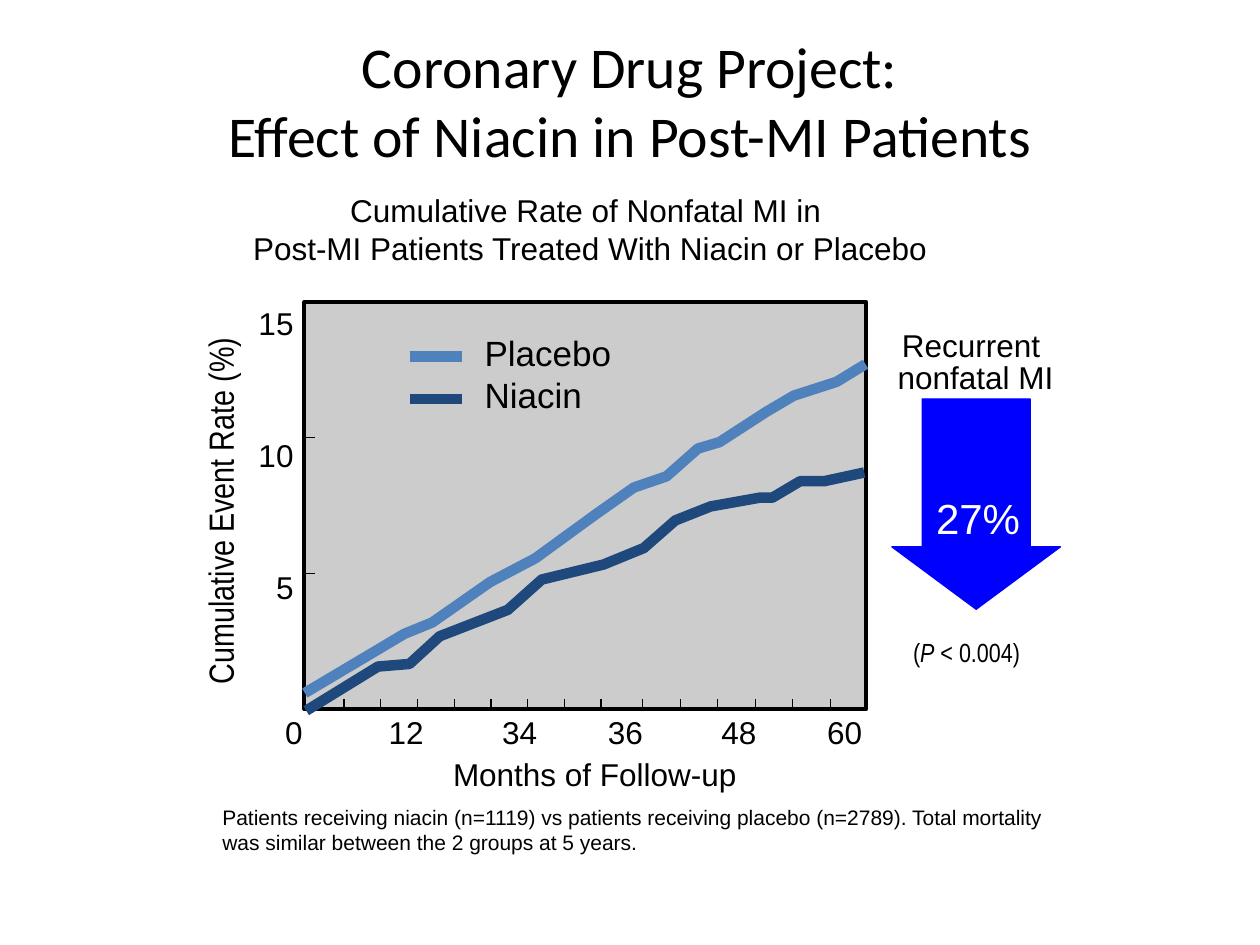
from pptx import Presentation
from pptx.dml.color import RGBColor
from pptx.enum.shapes import MSO_CONNECTOR, MSO_SHAPE
from pptx.enum.text import MSO_ANCHOR, MSO_AUTO_SIZE, PP_ALIGN
from pptx.oxml.ns import qn
from pptx.util import Pt
from lxml.etree import SubElement, Element

BLACK, WHITE, BLUE = "000000", "FFFFFF", "0000FF"
LEFT, CENTER, RIGHT = PP_ALIGN.LEFT, PP_ALIGN.CENTER, PP_ALIGN.RIGHT
PLOT = (174, 172.6, 321.1, 232.6)

SERIES = [
    ("Placebo", "4F81BD", [
        (174.2, 396), (231.1, 362.2), (247, 355.7), (280.1, 332.6), (306, 319),
        (340.6, 293.8), (362.2, 278.6), (380.9, 272.2), (398.9, 256.3),
        (411.1, 252.7), (437.8, 235.4), (453.6, 226.1), (478.1, 218.2),
        (494.6, 208.1)]),
    ("Niacin", "1F497D", [
        (175, 406.1), (216, 380.9), (234, 379.4), (251.3, 363.6),
        (290.2, 348.5), (309.6, 331.2), (344.9, 322.6), (367.9, 313.2),
        (385.9, 297.4), (406.1, 289.4), (434.2, 284.4), (441.4, 284.4),
        (457.2, 275), (470.9, 275), (493.9, 270)]),
]


def rgb(color):
    return RGBColor.from_string(color)


def style_line(line, color, width):
    line.color.rgb = rgb(color)
    line.width = Pt(width)


def format_paragraph(p, size, font="Arial", color=BLACK, align=LEFT):
    p.alignment = align
    p.font.size = Pt(size)
    p.font.name = font
    p.font.color.rgb = rgb(color)


def add_text(s, box, lines, size, font="Arial", color=BLACK, align=LEFT,
             spacing=None, wrap=False, anchor=MSO_ANCHOR.TOP):
    """Add a text box with one paragraph per item of lines."""
    sp = s.shapes.add_textbox(*map(Pt, box))
    tf = sp.text_frame
    tf.word_wrap = wrap
    tf.auto_size = MSO_AUTO_SIZE.SHAPE_TO_FIT_TEXT
    tf.vertical_anchor = anchor
    for i, line in enumerate(lines):
        p = tf.add_paragraph() if i else tf.paragraphs[0]
        p.text = line
        format_paragraph(p, size, font, color, align)
        if spacing:
            p.line_spacing = spacing
    return sp


def add_shape(s, kind, box, fill, line, width):
    sp = s.shapes.add_shape(kind, *map(Pt, box))
    sp.shadow.inherit = False
    sp.fill.solid()
    sp.fill.fore_color.rgb = rgb(fill)
    style_line(sp.line, line, width)
    return sp


def add_line(s, x1, y1, x2, y2, color=BLACK, width=0.75):
    line = s.shapes.add_connector(MSO_CONNECTOR.STRAIGHT,
                                  Pt(x1), Pt(y1), Pt(x2), Pt(y2))
    style_line(line.line, color, width)
    SubElement(line._element.spPr, qn("a:effectLst"))


def add_curve(s, points, color):
    (x, y), *rest = [(Pt(x), Pt(y)) for x, y in points]
    builder = s.shapes.build_freeform(x, y)
    builder.add_line_segments(rest, close=False)
    sp = builder.convert_to_shape()
    sp.shadow.inherit = False
    sp.fill.background()
    style_line(sp.line, color, 6)


def set_opacity(sp, percent):
    color = sp._element.spPr.find(qn("a:solidFill")).find(qn("a:srgbClr"))
    SubElement(color, qn("a:alpha"), val=str(percent * 1000))


def set_center_tabs(p, stops):
    tabs = Element(qn("a:tabLst"))
    for stop in stops:
        SubElement(tabs, qn("a:tab"), pos=str(Pt(stop)), algn="ctr")
    p._p.get_or_add_pPr().insert(0, tabs)


def add_title(s, text):
    sp = s.shapes.title
    sp.left, sp.top, sp.width, sp.height = map(Pt, (36, 12.2, 648, 90))
    tf = sp.text_frame
    tf.auto_size = MSO_AUTO_SIZE.NONE
    tf.vertical_anchor = MSO_ANCHOR.MIDDLE
    p = tf.paragraphs[0]
    p.text = text
    format_paragraph(p, 33, "Calibri", align=CENTER)


def add_axes(s):
    sp = add_text(s, (19.4, 276.5, 212.4, 31), ["Cumulative Event Rate (%)"],
                  20, "Arial Narrow", align=RIGHT)
    sp.rotation = 270
    add_text(s, (139.8, 115.9, 35, 236.2), ["15", "10", "5"], 18,
             align=RIGHT, spacing=3.5)
    sp = add_text(s, (155.9, 403.9, 365.8, 28.8), ["0\t12\t34\t36\t48\t60"],
                  18, wrap=True)
    set_center_tabs(sp.text_frame.paragraphs[0],
                    (69.1, 133.9, 194.4, 259.2, 319.7))
    add_text(s, (251.8, 427.7, 177.8, 28.8), ["Months of Follow-up"], 18)

    left, top, width, height = PLOT
    for start, count, step in ((196.6, 8, 20.98), (367.2, 6, 21.46)):
        for i in range(count):
            x = start + i * step
            add_line(s, x, 399.6, x, 405.4)
    for third in (1, 2):
        y = top + third * height / 3
        add_line(s, left + 5.8, y, left, y)


def add_series(s):
    for i, (name, color, points) in enumerate(SERIES):
        add_curve(s, points, color)
        y = 203.8 + i * 24.2
        add_line(s, 234, y, 264.2, y, color, 6)
        add_text(s, (269.8, y - 18, 87, 31), [name], 20)


def add_result(s):
    """Add the risk reduction arrow with its heading and P value."""
    arrow = add_shape(s, MSO_SHAPE.DOWN_ARROW, (509.6, 228, 96.4, 120.2),
                      BLUE, BLUE, 0.75)
    arrow.adjustments[0] = 0.64
    arrow.adjustments[1] = 0.37
    add_text(s, (527.8, 277.9, 62.6, 36), ["27%"], 24, color=WHITE)
    add_text(s, (505.6, 185.8, 103.7, 43.9), ["Recurrent \nnonfatal MI"], 18,
             align=CENTER, spacing=0.85)
    sp = add_text(s, (512.2, 360, 77.8, 25.9), [""], 15, "Arial Narrow",
                  align=RIGHT)
    for text, italic in (("(", False), ("P", True), (" < 0.004)", False)):
        r = sp.text_frame.paragraphs[0].add_run()
        r.text = text
        r.font.italic = italic


def main():
    prs = Presentation()
    prs.slide_width, prs.slide_height = Pt(720), Pt(540)
    s = prs.slides.add_slide(prs.slide_layouts[5])

    plot = add_shape(s, MSO_SHAPE.RECTANGLE, PLOT, BLACK, BLACK, 2.25)
    set_opacity(plot, 20)
    add_title(s, "Coronary Drug Project:\nEffect of Niacin in Post-MI Patients")
    add_text(s, (96, 105.5, 482.4, 50.4),
             ["Cumulative Rate of Nonfatal MI in ",
              "Post-MI Patients Treated With Niacin or Placebo"],
             18, align=CENTER, wrap=True, anchor=MSO_ANCHOR.MIDDLE)
    add_result(s)
    add_series(s)
    add_axes(s)
    add_text(s, (120, 456.1, 496.8, 36.7),
             ["Patients receiving niacin (n=1119) vs patients receiving placebo "
              "(n=2789). Total mortality\n"
              "was similar between the 2 groups at 5 years."], 12)
    prs.save("out.pptx")


if __name__ == "__main__":
    main()
